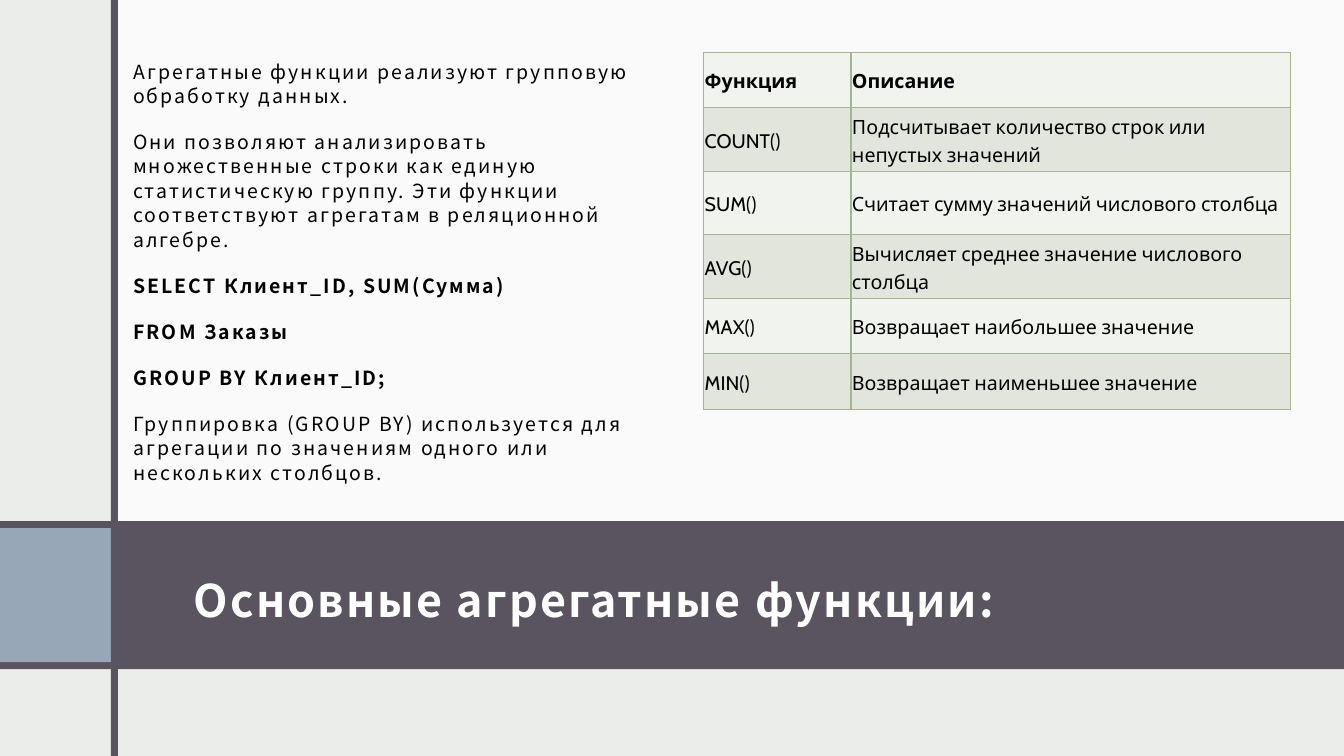
from lxml import etree
from pptx import Presentation
from pptx import util as u
from pptx.dml.color import RGBColor
from pptx.enum import shapes, text
from pptx.oxml import ns

W, H = 13.33, 7.5
SANS, CABIN = "Noto Sans CJK JP", "Cabin"
HUES = {
    "back": "EBEDEB", "panel": "FFFFFF", "band": "595460", "tile": "97A7B8",
    "ink": "000000", "light": "FFFFFF", "edge": "A5B592",
    "odd": "F0F3EE", "even": "E1E5DC",
}
TITLE = " Основные агрегатные функции:"
NOTES = [
    ("Агрегатные функции реализуют групповую обработку данных.", False),
    ("Они позволяют анализировать множественные строки как единую "
     "статистическую группу. Эти функции соответствуют агрегатам "
     "в реляционной алгебре.", False),
    ("SELECT Клиент_ID, SUM(Сумма)", True),
    ("FROM Заказы", True),
    ("GROUP BY Клиент_ID;", True),
    ("Группировка (GROUP BY) используется для агрегации по значениям "
     "одного или нескольких столбцов.", False),
]
ROWS = [
    ("Функция", "Описание"),
    ("COUNT()", "Подсчитывает количество строк или непустых значений"),
    ("SUM()", "Считает сумму значений числового столбца"),
    ("AVG()", "Вычисляет среднее значение числового столбца"),
    ("MAX()", "Возвращает наибольшее значение"),
    ("MIN()", "Возвращает наименьшее значение"),
]


def hue(name):
    """Return the named colour."""
    return RGBColor.from_string(HUES[name])


def inch(*sizes):
    """Turn inches into lengths."""
    return [u.Inches(size) for size in sizes]


def style(para, face, size, color, bold=False, track=0):
    """Set the font of a whole paragraph."""
    font = para.font
    font.name, font.size, font.bold = face, u.Pt(size), bold
    font.color.rgb = hue(color)
    if track:
        para._p.pPr.find(ns.qn("a:defRPr")).set("spc", str(int(track * 100)))


def place(holder, box, pads, anchor):
    """Move a placeholder to its box and set its insets."""
    holder.left, holder.top, holder.width, holder.height = inch(*box)
    frame = holder.text_frame
    frame.word_wrap = True
    frame.auto_size = text.MSO_AUTO_SIZE.NONE
    frame.vertical_anchor = anchor
    (frame.margin_left, frame.margin_top,
     frame.margin_right, frame.margin_bottom) = inch(*pads)
    return frame


def frame_art(slide, side, top, tall, rule):
    """Draw the panel, band, tile and upright rule behind the text."""
    parts = [
        ("panel", (side + rule / 2, 0, W - side - rule / 2, top)),
        ("band", (0, top, W, tall)),
        ("tile", (0, top + rule, side, tall - 2 * rule)),
        ("band", (side, 0, rule, H)),
    ]
    for name, box in parts:
        part = slide.shapes.add_shape(shapes.MSO_SHAPE.RECTANGLE, *inch(*box))
        part.shadow.inherit = False
        part.fill.solid()
        part.fill.fore_color.rgb = hue(name)
        part.line.fill.background()
        if name == "panel":
            tint = part._element.spPr.find(".//" + ns.qn("a:srgbClr"))
            etree.SubElement(tint, ns.qn("a:alpha"), val="75000")
        slide.shapes.title._element.addprevious(part._element)


def heading(slide, box):
    """Fill the title placeholder."""
    frame = place(slide.shapes.title, box, (0.12, 0.2, 0.12, 0.1),
                  text.MSO_ANCHOR.MIDDLE)
    frame.text = TITLE
    para = frame.paragraphs[0]
    para.alignment = text.PP_ALIGN.LEFT
    style(para, SANS, 32, "light", True, 1.5)


def notes(slide, box):
    """Fill the body placeholder with plain paragraphs."""
    frame = place(slide.placeholders[1], box, (0.12, 0.12, 0.12, 0.1),
                  text.MSO_ANCHOR.TOP)
    frame.text = "\n".join(line for line, _ in NOTES)
    for para, (_, bold) in zip(frame.paragraphs, NOTES):
        para.line_spacing = 1.05
        para.space_before, para.space_after = u.Pt(9.3), u.Pt(6)
        props = para._p.get_or_add_pPr()
        props.set("marL", "0")
        props.set("indent", "0")
        etree.SubElement(props, ns.qn("a:buNone"))
        style(para, SANS, 13.9, "ink", bold, 1.5)


def border(cell):
    """Line all four sides of a cell."""
    props = cell._tc.get_or_add_tcPr()
    for spot, side in enumerate(("lnL", "lnR", "lnT", "lnB")):
        line = etree.Element(ns.qn("a:" + side), w=str(u.Pt(1)))
        fill = etree.SubElement(line, ns.qn("a:solidFill"))
        etree.SubElement(fill, ns.qn("a:srgbClr"), val=HUES["edge"])
        props.insert(spot, line)


def table(slide, box, cols, rows):
    """Build the table of functions."""
    grid = slide.shapes.add_table(len(rows), len(cols), *inch(*box)).table
    for col, wide in zip(grid.columns, inch(*cols)):
        col.width = wide
    for r, (row, tall) in enumerate(zip(grid.rows, inch(*rows))):
        row.height = tall
        for cell, words in zip(row.cells, ROWS[r]):
            cell.fill.solid()
            cell.fill.fore_color.rgb = hue("even" if r % 2 else "odd")
            cell.vertical_anchor = text.MSO_ANCHOR.MIDDLE
            cell.margin_left = cell.margin_right = u.Inches(0.01)
            cell.margin_top = cell.margin_bottom = u.Inches(0.01)
            cell.text = words
            para = cell.text_frame.paragraphs[0]
            para.line_spacing, para.space_after = 1.15, u.Pt(8)
            style(para, CABIN, 14, "ink", r == 0)
            border(cell)


def main():
    """Build and save the slide."""
    deck = Presentation()
    deck.slide_width, deck.slide_height = inch(W, H)
    slide = deck.slides.add_slide(deck.slide_layouts[1])
    slide.background.fill.solid()
    slide.background.fill.fore_color.rgb = hue("back")
    frame_art(slide, 1.1, 5.17, 1.47, 0.07)
    heading(slide, (1.68, 5.33, 10.95, 1.13))
    notes(slide, (1.2, 0.46, 5.38, 4.71))
    low, high = 0.55, 0.63
    table(slide, (6.98, 0.52, 5.82, 3.54), (1.46, 4.36),
          (low, high, high, high, low, low))
    deck.save("out.pptx")


if __name__ == "__main__":
    main()
